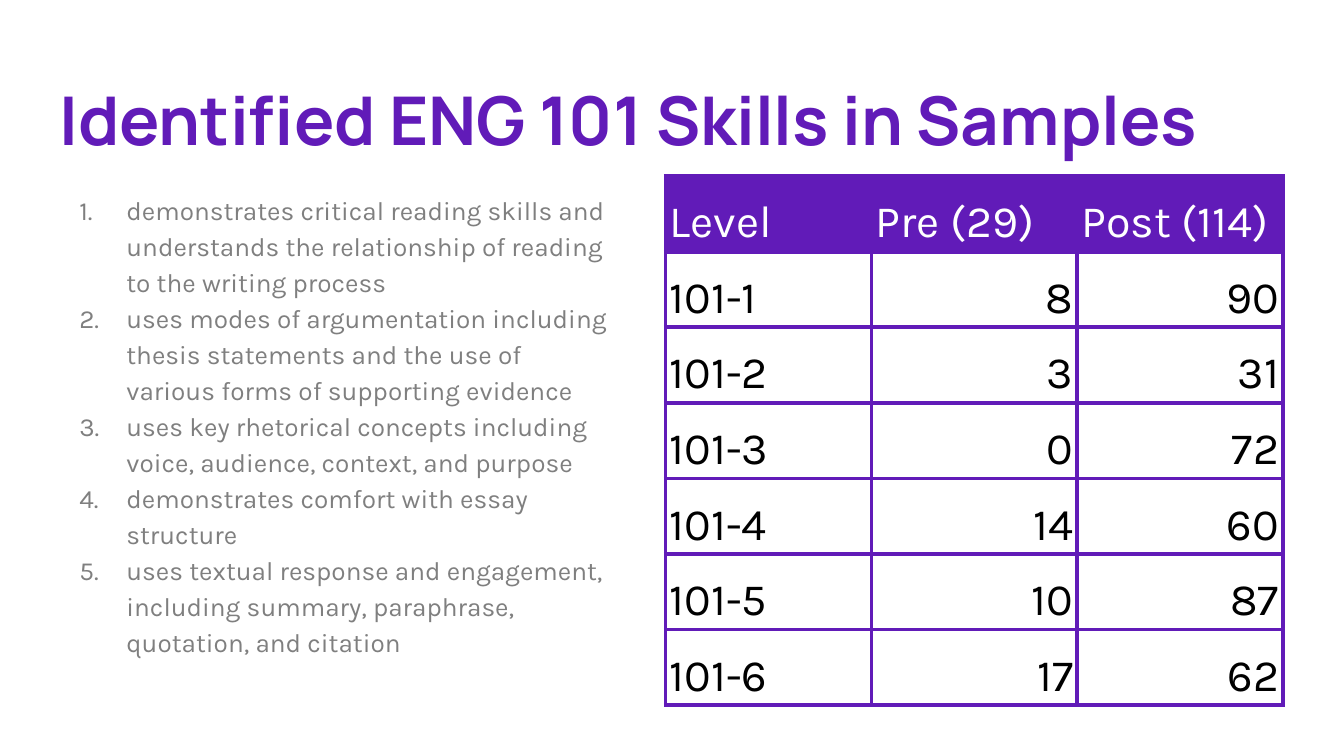
from lxml import etree
from pptx import Presentation, util as u
from pptx.dml import color
from pptx.enum import text
from pptx.oxml import ns

PURPLE, GREY, WHITE, BLACK = "611BB8", "7F7F7F", "FFFFFF", "000000"
SKILLS = [
    "demonstrates critical reading skills and understands the relationship of reading to the writing process",
    "uses modes of argumentation including thesis statements and the use of various forms of supporting evidence",
    "uses key rhetorical concepts including voice, audience, context, and purpose",
    "demonstrates comfort with essay structure",
    "uses textual response and engagement, including summary, paraphrase, quotation, and citation",
]
COUNTS = [
    ("Level", "Pre (29)", "Post (114)"),
    ("101-1", "8", "90"),
    ("101-2", "3", "31"),
    ("101-3", "0", "72"),
    ("101-4", "14", "60"),
    ("101-5", "10", "87"),
    ("101-6", "17", "62"),
]


def rgb(code):
    return color.RGBColor.from_string(code)


def add(parent, tag, **attrs):
    return etree.SubElement(parent, ns.qn(tag), attrs)


class Deck:
    """Holds the style and the current slide."""

    head, body = "Manrope", "Karla"

    def __init__(self, width, height):
        self.file = Presentation()
        self.file.slide_width, self.file.slide_height = u.Cm(width), u.Cm(height)
        self.slide = self.file.slides.add_slide(self.file.slide_layouts[6])

    def style(self, para, name, size, code):
        para.font.name, para.font.size = name, u.Pt(size)
        para.font.color.rgb = rgb(code)

    def box(self, *place):
        frame = self.slide.shapes.add_textbox(*map(u.Cm, place)).text_frame
        frame.word_wrap = True
        frame.margin_left = frame.margin_right = u.Cm(0.25)
        frame.margin_top = frame.margin_bottom = u.Cm(0.25)
        return frame

    def title(self, words, *place):
        para = self.box(*place).paragraphs[0]
        para.text = words
        self.style(para, self.head, 36, PURPLE)
        para.font.bold = True

    def list(self, items, *place):
        frame = self.box(*place)
        frame.text = "\n".join(items)
        for para in frame.paragraphs:
            para.line_spacing = 1.15
            self.style(para, self.body, 14, GREY)
            props = para._p.get_or_add_pPr()
            props.set("marL", str(u.Cm(1.27)))
            props.set("indent", str(u.Cm(-0.89)))
            tint = add(props, "a:buClr")
            add(tint, "a:srgbClr", val=GREY)
            add(props, "a:buFont", typeface=self.body)
            add(props, "a:buAutoNum", type="arabicPeriod")

    def edge(self, cell):
        props = cell._tc.get_or_add_tcPr()
        for spot, side in enumerate(("L", "R", "T", "B")):
            line = add(props, f"a:ln{side}", w=str(u.Pt(2.25)))
            add(add(line, "a:solidFill"), "a:srgbClr", val=PURPLE)
            props.insert(spot, line)

    def cell(self, cell, words, top, first):
        cell.text = words
        cell.vertical_anchor = text.MSO_ANCHOR.BOTTOM
        cell.margin_left = cell.margin_right = u.Cm(0.08)
        cell.margin_top = cell.margin_bottom = u.Cm(0.05)
        para = cell.text_frame.paragraphs[0]
        para.line_spacing = 1.15
        self.style(para, self.body, 24, WHITE if top else BLACK)
        if top:
            cell.fill.solid()
            cell.fill.fore_color.rgb = rgb(PURPLE)
        else:
            cell.fill.background()
            if not first:
                para.alignment = text.PP_ALIGN.RIGHT
        self.edge(cell)

    def table(self, rows, *place):
        size = len(rows), len(rows[0])
        grid = self.slide.shapes.add_table(*size, *map(u.Cm, place)).table
        grid.first_row = grid.horz_banding = False
        for r, row in enumerate(rows):
            for c, words in enumerate(row):
                self.cell(grid.cell(r, c), words, r == 0, c == 0)


def main():
    deck = Deck(25.4, 14.29)
    deck.title("Identified ENG 101 Skills in Samples", 0.87, 1.24, 23.67, 1.73)
    deck.list(SKILLS, 0.87, 3.33, 11.02, 9.5)
    deck.table(COUNTS, 12.58, 3.33, 11.67, 10)
    deck.file.save("out.pptx")


if __name__ == "__main__":
    main()
